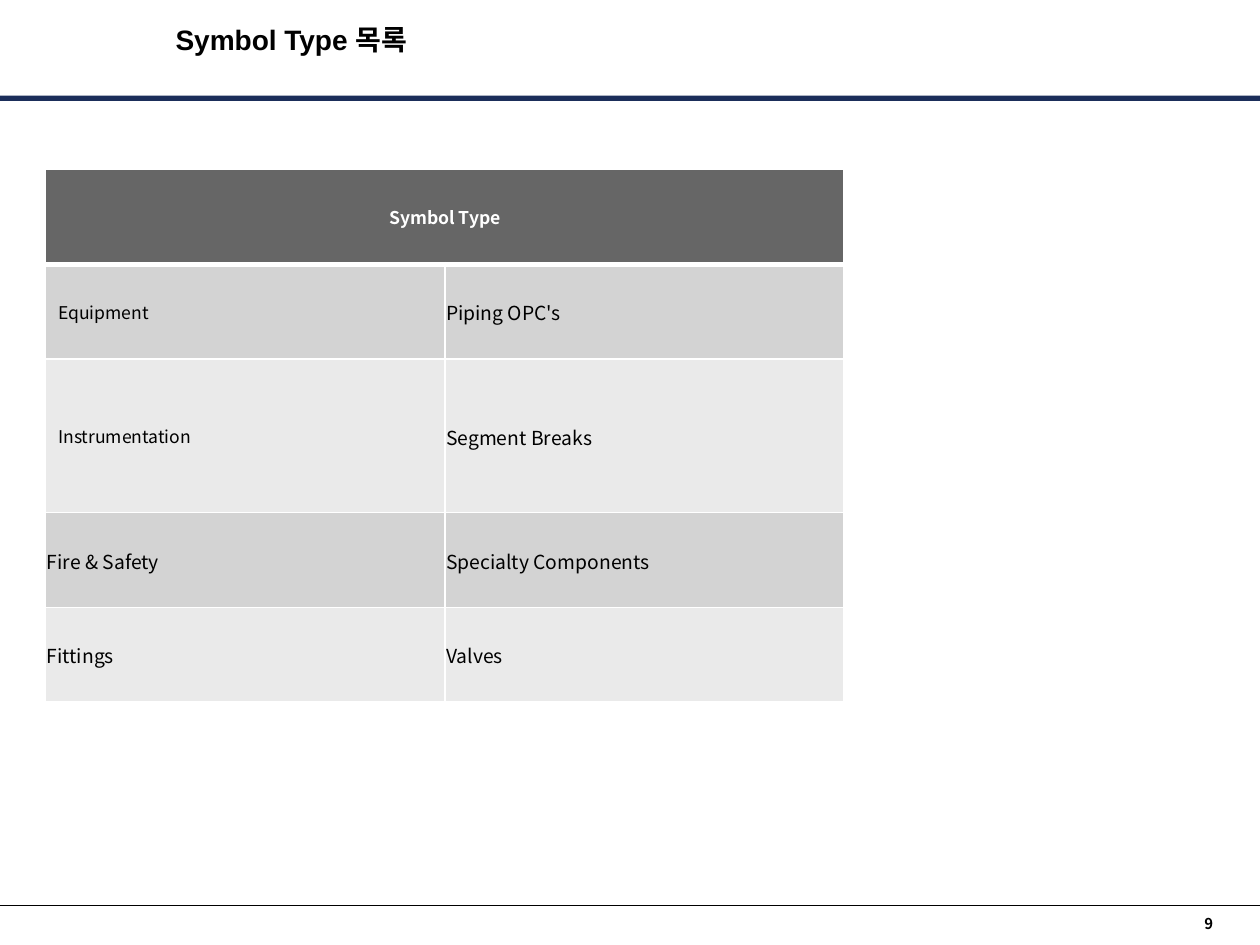
from lxml import etree
from pptx import Presentation
from pptx.dml.color import RGBColor
from pptx.enum.shapes import MSO_CONNECTOR, MSO_SHAPE
from pptx.enum.text import MSO_ANCHOR, PP_ALIGN
from pptx.oxml.ns import qn
from pptx.util import Pt

LINE = MSO_CONNECTOR.STRAIGHT
RECT = MSO_SHAPE.RECTANGLE
MIDDLE = MSO_ANCHOR.MIDDLE
LEFT, CENTER, RIGHT = PP_ALIGN.LEFT, PP_ALIGN.CENTER, PP_ALIGN.RIGHT

WIDTH, HEIGHT = 717.84, 538.56
SANS, KOREAN = "Arial", "Noto Sans CJK KR"
BLACK, WHITE, NAVY = "000000", "FFFFFF", "1B2E5A"
HEAD, BANDS = "666666", ("D3D3D3", "EAEAEA")
SIDES = ("lnL", "lnR", "lnT", "lnB")

TYPES = [
    ("Equipment", "Piping OPC's"),
    ("Instrumentation", "Segment Breaks"),
    ("Fire & Safety", "Specialty Components"),
    ("Fittings", "Valves"),
]
INSET = ("Equipment", "Instrumentation")
ROWS = (54, 54, 87.6, 54, 54)


def color(code):
    return RGBColor.from_string(code)


def write(frame, text, size, name, tint=BLACK, bold=False, align=LEFT):
    frame.text = text
    para = frame.paragraphs[0]
    para.alignment = align
    for run in para.runs:
        run.font.size = Pt(size)
        run.font.name = name
        run.font.bold = bold
        run.font.color.rgb = color(tint)


def border(cell, base):
    props = cell._tc.get_or_add_tcPr()
    for side in SIDES:
        width = base if side == "lnB" else 1
        line = etree.SubElement(props, qn("a:" + side), w=str(Pt(width)))
        fill = etree.SubElement(line, qn("a:solidFill"))
        etree.SubElement(fill, qn("a:srgbClr"), val=WHITE)


def paint(cell, fill, base=1):
    border(cell, base)
    cell.fill.solid()
    cell.fill.fore_color.rgb = color(fill)
    cell.vertical_anchor = MIDDLE


def header(slide, left, top, width, height):
    bar = slide.shapes.add_shape(
        RECT, Pt(left), Pt(top + height - 3), Pt(width), Pt(3))
    bar.shadow.inherit = False
    bar.fill.solid()
    bar.fill.fore_color.rgb = color(NAVY)
    bar.line.fill.background()
    box = slide.shapes.add_textbox(
        Pt(left + 9.4), Pt(top + 9.4), Pt(313.2), Pt(33.8))
    box.text_frame.word_wrap = True
    write(box.text_frame, "Symbol Type 목록", 16, SANS, bold=True, align=CENTER)


def footer(slide, left, top, width):
    rule = slide.shapes.add_connector(
        LINE, Pt(left), Pt(top), Pt(left + width), Pt(top))
    etree.SubElement(rule._element.spPr, qn("a:effectLst"))
    rule.line.width = Pt(0.75)
    rule.line.color.rgb = color(BLACK)
    box = slide.shapes.add_textbox(
        Pt(left + width - 38.2), Pt(top + 5), Pt(11.5), Pt(10))
    frame = box.text_frame
    frame.margin_left = frame.margin_right = 0
    frame.margin_top = frame.margin_bottom = 0
    frame.word_wrap = False
    write(frame, "9", 8.5, KOREAN, bold=True, align=RIGHT)


def listing(slide, left, top, width, height):
    grid = slide.shapes.add_table(
        len(ROWS), 2, Pt(left), Pt(top), Pt(width), Pt(height)).table
    for col in grid.columns:
        col.width = Pt(width / 2)
    for row, size in zip(grid.rows, ROWS):
        row.height = Pt(size)
    title = grid.cell(0, 0)
    title.merge(grid.cell(0, 1))
    for cell in grid.rows[0].cells:
        paint(cell, HEAD, 3)
    write(title.text_frame, "Symbol Type", 10, KOREAN, WHITE, True, CENTER)
    for i, pair in enumerate(TYPES):
        for j, text in enumerate(pair):
            cell = grid.cell(i + 1, j)
            paint(cell, BANDS[i % 2])
            wide = text in INSET
            if not wide:
                cell.margin_left = cell.margin_right = Pt(0.7)
                cell.margin_top, cell.margin_bottom = Pt(0.7), 0
            write(cell.text_frame, text, 10 if wide else 11, KOREAN)


def main():
    deck = Presentation()
    deck.slide_width, deck.slide_height = Pt(WIDTH), Pt(HEIGHT)
    slide = deck.slides.add_slide(deck.slide_layouts[6])
    header(slide, 0, 0, WIDTH, 57.6)
    footer(slide, 0, 516.2, WIDTH)
    listing(slide, 26, 96.6, 455, sum(ROWS))
    deck.save("out.pptx")


if __name__ == "__main__":
    main()
